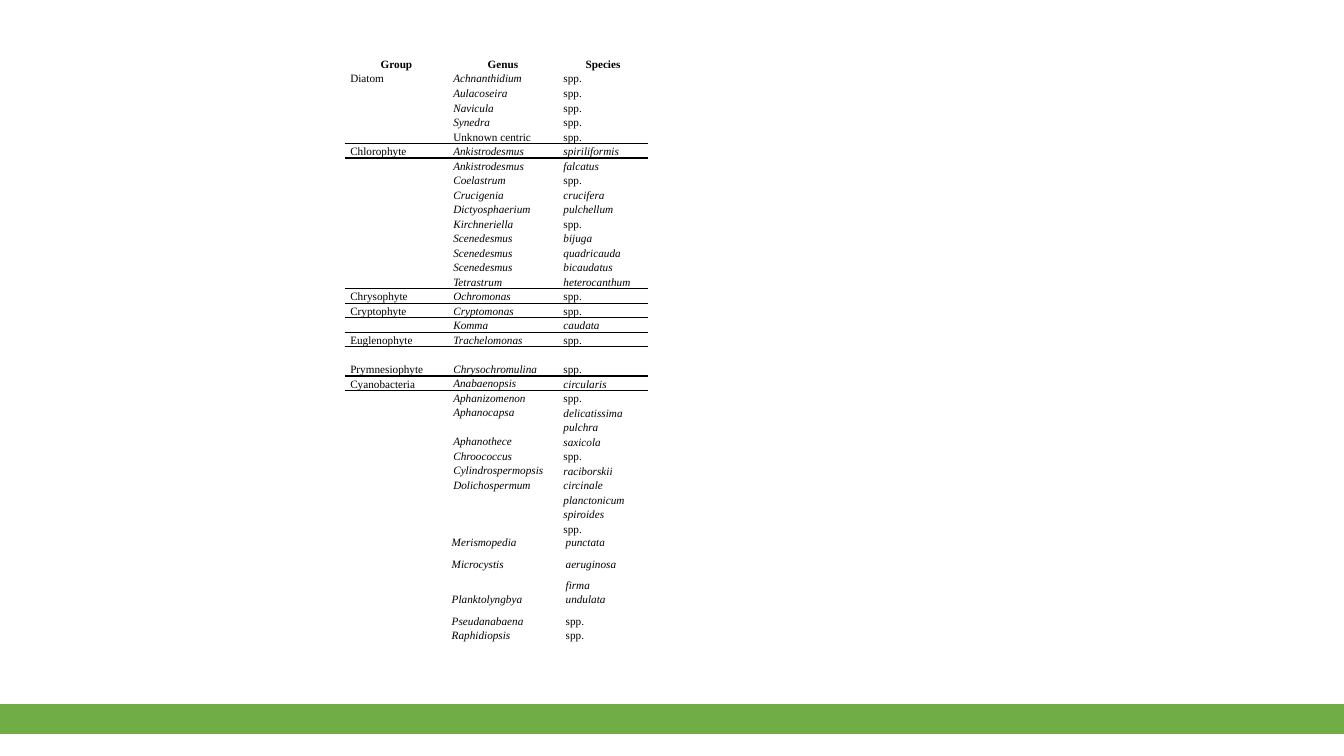
from lxml import etree
from pptx import Presentation, util as u
from pptx.dml.color import RGBColor
from pptx.enum import shapes, text
from pptx.oxml.ns import qn

HEADINGS = ("Group", "Genus", "Species")
GROUPS = {
    "Diatom": [("Achnanthidium", "spp."), ("Aulacoseira", "spp."), ("Navicula", "spp."),
               ("Synedra", "spp."), ("Unknown centric", "spp.")],
    "Chlorophyte": [("Ankistrodesmus", "spiriliformis"), ("Ankistrodesmus", "falcatus"),
                    ("Coelastrum", "spp."), ("Crucigenia", "crucifera"),
                    ("Dictyosphaerium", "pulchellum"), ("Kirchneriella", "spp."),
                    ("Scenedesmus", "bijuga"), ("Scenedesmus", "quadricauda"),
                    ("Scenedesmus", "bicaudatus"), ("Tetrastrum", "heterocanthum")],
    "Chrysophyte": [("Ochromonas", "spp.")],
    "Cryptophyte": [("Cryptomonas", "spp."), ("Komma", "caudata")],
    "Euglenophyte": [("Trachelomonas", "spp.")],
    "Prymnesiophyte": [("Chrysochromulina", "spp.")],
    "Cyanobacteria": [("Anabaenopsis", "circularis"), ("Aphanizomenon", "spp."),
                      ("Aphanocapsa", "delicatissima"), ("", "pulchra"),
                      ("Aphanothece", "saxicola"), ("Chroococcus", "spp."),
                      ("Cylindrospermopsis", "raciborskii"), ("Dolichospermum", "circinale"),
                      ("", "planctonicum"), ("", "spiroides"), ("", "spp.")],
}
MORE_CYANOBACTERIA = [
    ("", "Merismopedia", "punctata"),
    ("", "Microcystis", "aeruginosa"),
    ("", "", "firma"),
    ("", "Planktolyngbya", "undulata"),
    ("", "Pseudanabaena\nRaphidiopsis", "spp.\nspp."),
]
UPRIGHT = {"spp.", "Unknown centric", *HEADINGS, *GROUPS}

THEME = {"font": "Times New Roman", "size": 8, "ink": "000000", "bar": "70AD47", "rule": 1}
PLAIN_STYLE = "{2D5ABB26-0587-4C30-8999-92F81FD0307C}"
TABLE_LEFT, TABLE_TOP = 246.4, 40.2
ROW, TALL_ROW = 10.38, 20.9
MAIN_COLUMNS, MORE_COLUMNS = (73.6, 78.7, 64.2), (71.3, 81.4, 64.1)
MORE_ROWS = (15.1, 15.1, 10.1, 15.1, 32.4)


def set_format(target, values):
    for name, value in values.items():
        setattr(target, name, value)


def write_cell(cell, words, margin, anchor, spacing, heading=False):
    set_format(cell, {"margin_left": u.Pt(margin), "margin_right": u.Pt(margin),
                      "margin_top": 0, "margin_bottom": 0, "vertical_anchor": anchor})
    cell.fill.background()
    cell.text_frame.text = words
    for para in cell.text_frame.paragraphs:
        para.line_spacing = spacing
        if heading:
            para.alignment = text.PP_ALIGN.CENTER
        for span in para.runs:
            set_format(span.font, {"name": THEME["font"], "size": u.Pt(THEME["size"]),
                                   "bold": heading, "italic": span.text not in UPRIGHT})
            span.font.color.rgb = RGBColor.from_string(THEME["ink"])
        if not para.runs:
            etree.SubElement(para._p, qn("a:endParaRPr"), sz=str(THEME["size"] * 100))


def draw_border(cell, tag, position):
    """Add one edge line; edges must precede the fill, top before bottom."""
    line = etree.Element(qn(tag), w=str(u.Pt(THEME["rule"])))
    fill = etree.SubElement(line, qn("a:solidFill"))
    etree.SubElement(fill, qn("a:srgbClr"), val=THEME["ink"])
    cell._tc.get_or_add_tcPr().insert(position, line)


def add_plain_table(page, top, widths, heights):
    frame = page.shapes.add_table(len(heights), len(widths), u.Pt(TABLE_LEFT), u.Pt(top),
                                  u.Pt(sum(widths)), u.Pt(sum(heights)))
    table = frame.table
    set_format(table, {"first_row": False, "horz_banding": False})
    table._tbl.tblPr.find(qn("a:tableStyleId")).text = PLAIN_STYLE
    for column, width in zip(table.columns, widths):
        column.width = u.Pt(width)
    for row, height in zip(table.rows, heights):
        row.height = u.Pt(height)
    return table


def add_main_table(page):
    """Return the bottom of the table in points."""
    rows, starts = [HEADINGS], []
    for group, members in GROUPS.items():
        starts.append(len(rows))
        rows += [("" if i else group, *member) for i, member in enumerate(members)]
    heights = [TALL_ROW if row[0] == "Prymnesiophyte" else ROW for row in rows]
    table = add_plain_table(page, TABLE_TOP, MAIN_COLUMNS, heights)
    for r, row in enumerate(rows):
        for c, words in enumerate(row):
            cell = table.cell(r, c)
            centred = c == 1 and r >= starts[-1]
            anchor = text.MSO_ANCHOR.MIDDLE if centred else text.MSO_ANCHOR.BOTTOM
            write_cell(cell, words, 3.8, anchor, 1.07, heading=r == 0)
            above, below = r in starts[1:], r + 1 in starts[1:]
            if above:
                draw_border(cell, "a:lnT", 0)
            if below:
                draw_border(cell, "a:lnB", int(above))
    return TABLE_TOP + sum(heights)


def add_more_table(page, top):
    table = add_plain_table(page, top, MORE_COLUMNS, MORE_ROWS)
    for r, row in enumerate(MORE_CYANOBACTERIA):
        for c, words in enumerate(row):
            spacing = 1.15 if "\n" in words else 1.07
            write_cell(table.cell(r, c), words, 5, text.MSO_ANCHOR.TOP, spacing)


def main():
    deck = Presentation()
    set_format(deck, {"slide_width": u.Pt(960), "slide_height": u.Pt(540)})
    page = deck.slides.add_slide(deck.slide_layouts[6])
    bar = page.shapes.add_shape(shapes.MSO_SHAPE.RECTANGLE, 0, u.Pt(503.3),
                                deck.slide_width, u.Pt(20.2))
    bar.shadow.inherit = False
    bar.fill.solid()
    bar.fill.fore_color.rgb = bar.line.color.rgb = RGBColor.from_string(THEME["bar"])
    bar.line.width = u.Pt(THEME["rule"])
    add_more_table(page, add_main_table(page))
    deck.save("out.pptx")


if __name__ == "__main__":
    main()
